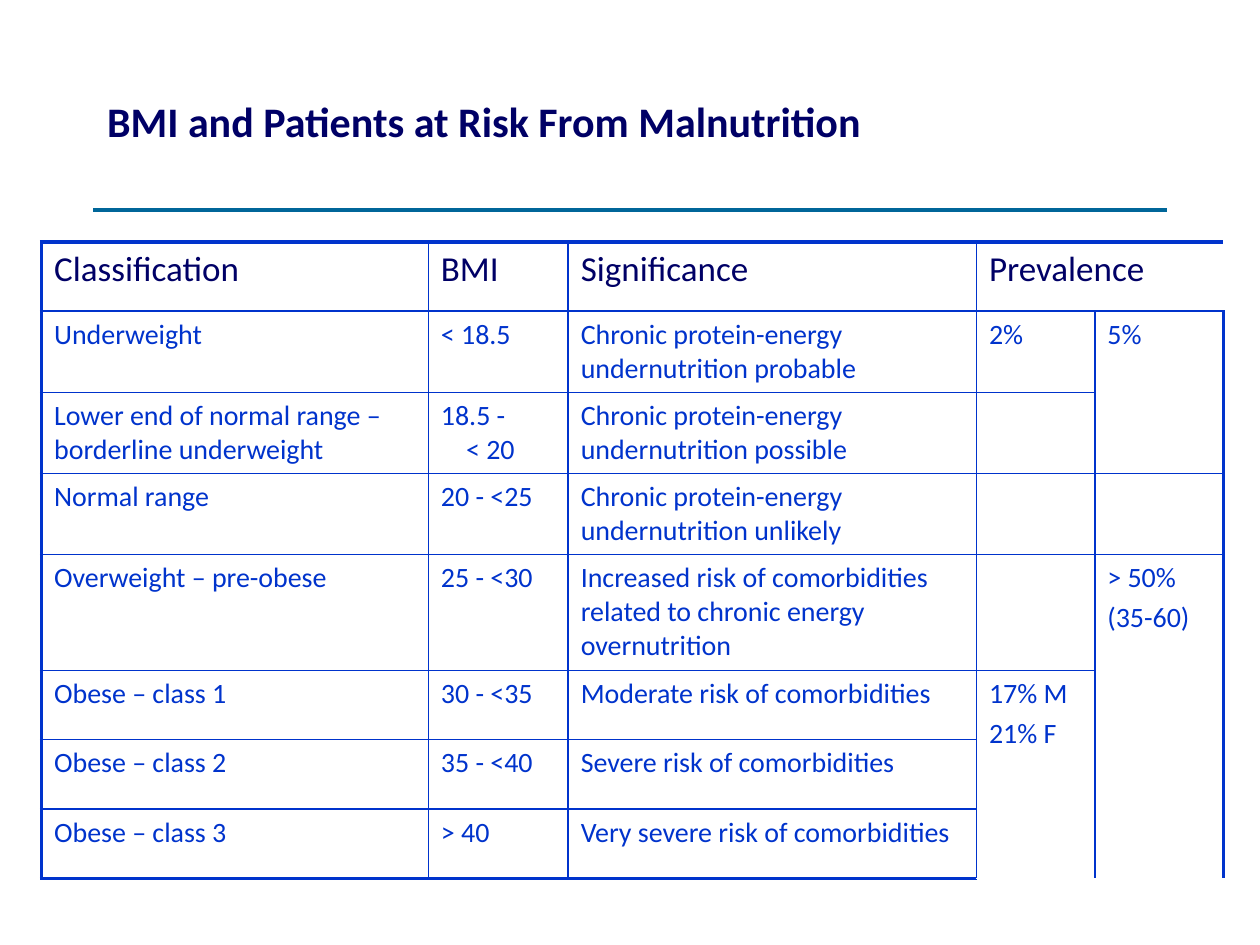
"""Build a slide with a table of BMI classes, their significance and prevalence."""
from lxml import etree
from pptx import Presentation
from pptx import util as u
from pptx.dml.color import RGBColor
from pptx.enum import shapes, text
from pptx.oxml import ns

THEME = {
    "font": "Calibri",
    "heading": RGBColor.from_string("000066"),
    "body": RGBColor.from_string("0033CC"),
    "rule": RGBColor.from_string("006699"),
    "title_size": 24,
    "header_size": 20,
    "body_size": 16,
    "outer_line": 2.25,
    "inner_line": 1,
    "paragraph_gap": 3.2,
    "hanging": 0.2,
}

TITLE = "BMI and Patients at Risk From Malnutrition"
ROWS = [
    ("Classification", "BMI", "Significance", "Prevalence", ""),
    ("Underweight", "< 18.5", "Chronic protein-energy undernutrition probable", "2%", "5%"),
    ("Lower end of normal range – borderline underweight", "18.5 -\v< 20",
     "Chronic protein-energy undernutrition possible", "", ""),
    ("Normal range", "20 - <25", "Chronic protein-energy undernutrition unlikely", "", ""),
    ("Overweight – pre-obese", "25 - <30",
     "Increased risk of comorbidities related to chronic energy overnutrition", "", "> 50%\n(35-60)"),
    ("Obese – class 1", "30 - <35", "Moderate risk of comorbidities", "17% M\n21% F", ""),
    ("Obese – class 2", "35 - <40", "Severe risk of comorbidities", "", ""),
    ("Obese – class 3", "> 40", "Very severe risk of comorbidities", "", ""),
]
MERGES = [((0, 3), (0, 4)), ((1, 4), (2, 4)), ((4, 4), (7, 4)), ((5, 3), (7, 3))]
COLUMN_WIDTHS = [3.07, 1.11, 3.24, 0.94, 1.02]
ROW_HEIGHTS = [0.55, 0.64, 0.64, 0.64, 0.92, 0.55, 0.55, 0.55]
EDGES = {"lnL": (0, -1), "lnR": (0, 1), "lnT": (-1, 0), "lnB": (1, 0)}


def style(paragraph, size, color, bold=False):
    font = paragraph.font
    font.name, font.size, font.bold = THEME["font"], u.Pt(size), bold
    font.color.rgb = color


def add_title(slide):
    title = slide.shapes.title
    title.left, title.top = u.Inches(0.75), u.Inches(0.25)
    title.width, title.height = u.Inches(8.5), u.Inches(1.42)
    title.text_frame.text = TITLE
    title.text_frame.vertical_anchor = text.MSO_ANCHOR.MIDDLE
    paragraph = title.text_frame.paragraphs[0]
    paragraph.alignment = text.PP_ALIGN.LEFT
    style(paragraph, THEME["title_size"], THEME["heading"], True)


def add_rule(slide):
    rule = slide.shapes.add_connector(
        shapes.MSO_CONNECTOR.STRAIGHT, u.Inches(0.74), u.Inches(1.67), u.Inches(9.26), u.Inches(1.67))
    rule.line.color.rgb = THEME["rule"]
    rule.line.width = u.Pt(THEME["outer_line"])
    etree.SubElement(rule._element.spPr, ns.qn("a:effectLst"))


def fill_cell(cell, content, is_header):
    cell.fill.background()
    cell.text = content
    size = THEME["header_size" if is_header else "body_size"]
    color = THEME["heading" if is_header else "body"]
    for index, paragraph in enumerate(cell.text_frame.paragraphs):
        style(paragraph, size, color)
        if index:
            paragraph.space_before = u.Pt(THEME["paragraph_gap"])
        if "\v" in paragraph.text:
            properties = paragraph._p.get_or_add_pPr()
            properties.set("marL", str(u.Inches(THEME["hanging"])))
            properties.set("indent", str(-u.Inches(THEME["hanging"])))


def border_cell(cell, position, owners):
    properties = cell._tc.get_or_add_tcPr()
    lines = []
    for tag, (down, right) in EDGES.items():
        neighbour = owners.get((position[0] + down, position[1] + right))
        if neighbour == owners[position]:
            continue
        weight = THEME["inner_line" if neighbour else "outer_line"]
        line = etree.Element(ns.qn(f"a:{tag}"), w=str(u.Pt(weight)))
        fill = etree.SubElement(line, ns.qn("a:solidFill"))
        etree.SubElement(fill, ns.qn("a:srgbClr"), val=str(THEME["body"]))
        lines.append(line)
    properties[0:0] = lines


def add_bmi_table(slide):
    frame = slide.shapes.add_table(
        len(ROWS), len(COLUMN_WIDTHS), u.Inches(0.33), u.Inches(1.92),
        u.Inches(sum(COLUMN_WIDTHS)), u.Inches(sum(ROW_HEIGHTS)))
    table = frame.table
    table.first_row = table.horz_banding = False
    for column, width in zip(table.columns, COLUMN_WIDTHS):
        column.width = u.Inches(width)
    for row, height in zip(table.rows, ROW_HEIGHTS):
        row.height = u.Inches(height)

    owners = {(r, c): (r, c) for r, row in enumerate(ROWS) for c in range(len(row))}
    for first, last in MERGES:
        table.cell(*first).merge(table.cell(*last))
        for r in range(first[0], last[0] + 1):
            for c in range(first[1], last[1] + 1):
                owners[r, c] = first
    for r, c in owners:
        fill_cell(table.cell(r, c), ROWS[r][c], r == 0)
        border_cell(table.cell(r, c), (r, c), owners)


def main():
    presentation = Presentation()
    presentation.slide_width, presentation.slide_height = u.Inches(10), u.Inches(7.5)
    slide = presentation.slides.add_slide(presentation.slide_layouts[5])
    add_rule(slide)
    add_title(slide)
    add_bmi_table(slide)
    presentation.save("out.pptx")


if __name__ == "__main__":
    main()
